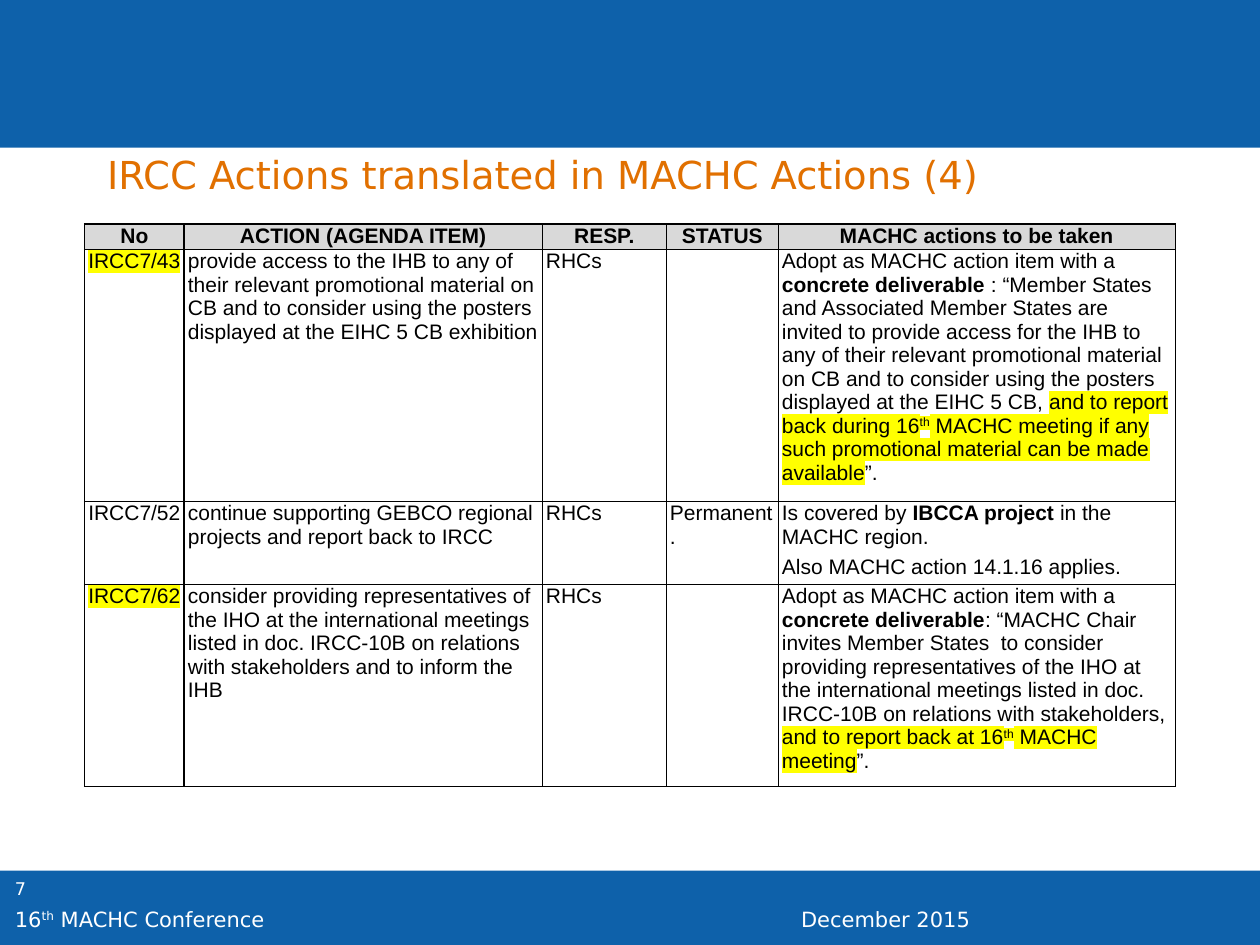
from dataclasses import dataclass

from lxml import etree
from pptx import Presentation
from pptx.dml.color import RGBColor
from pptx.enum.shapes import MSO_SHAPE
from pptx.enum.text import MSO_ANCHOR, MSO_AUTO_SIZE, PP_ALIGN
from pptx.oxml.ns import qn
from pptx.util import Pt

RECTANGLE = MSO_SHAPE.RECTANGLE
TOP, MIDDLE = MSO_ANCHOR.TOP, MSO_ANCHOR.MIDDLE
NO_AUTO_SIZE = MSO_AUTO_SIZE.NONE
LEFT, CENTER = PP_ALIGN.LEFT, PP_ALIGN.CENTER
TITLE_ONLY = 5


@dataclass(frozen=True)
class Theme:
    blue: str = "0E61AA"
    orange: str = "E17000"
    white: str = "FFFFFF"
    black: str = "000000"
    grey: str = "D9D9D9"
    yellow: str = "FFFF00"
    page_font: str = "DejaVu Sans"
    table_font: str = "Arial"
    title_size: float = 22
    text_size: float = 12
    number_size: float = 10


@dataclass(frozen=True)
class Span:
    text: str
    bold: bool = False
    marked: bool = False
    raised: bool = False


@dataclass(frozen=True)
class Style:
    font: str
    size: float
    color: str


@dataclass(frozen=True)
class Area:
    left: float
    top: float
    width: float
    height: float

    def lengths(self) -> tuple:
        return Pt(self.left), Pt(self.top), Pt(self.width), Pt(self.height)


@dataclass(frozen=True)
class Label:
    area: Area
    size: float
    spans: tuple


@dataclass(frozen=True)
class Action:
    number: Span
    task: str
    status: str
    outcome: tuple


THEME = Theme()
TITLE_STYLE = Style(THEME.page_font, THEME.title_size, THEME.orange)
TABLE_STYLE = Style(THEME.table_font, THEME.text_size, THEME.black)

BANDS = (Area(0, 497.5, 720, 42.5), Area(0, 0, 720, 84.4))
LABELS = (
    Label(Area(1.4, 498.2, 56.2, 28.8), THEME.number_size, (Span("7"),)),
    Label(Area(450.7, 514.3, 269.3, 17.3), THEME.text_size, (Span("December 2015"),)),
    Label(Area(1.4, 514.3, 315.4, 17.3), THEME.text_size,
          (Span("16"), Span("th", raised=True), Span(" MACHC Conference"))),
)
TITLE_AREA = Area(54, 82.8, 511.9, 33.8)
TABLE_AREA = Area(48.3, 128.1, 623.4, 321.2)
COLUMN_WIDTHS = (57, 204.6, 70.9, 64, 226.9)
ROW_HEIGHTS = (14.5, 143.9, 47.4, 115.4)
HEADERS = ("No", "ACTION (AGENDA ITEM)", "RESP.", "STATUS", "MACHC actions to be taken")
ADOPT = Span("Adopt as MACHC action item with a ")

ACTIONS = (
    Action(
        Span("IRCC7/43", marked=True),
        "provide access to the IHB to any of their relevant promotional material on CB "
        "and to consider using the posters displayed at the EIHC 5 CB exhibition",
        "",
        ((ADOPT,
          Span("concrete deliverable ", bold=True),
          Span(": “Member States and Associated Member States are invited to provide "
               "access for the IHB to any of their relevant promotional material on CB and "
               "to consider using the posters displayed at the EIHC 5 CB, "),
          Span("and to report back during 16", marked=True),
          Span("th", marked=True, raised=True),
          Span(" MACHC meeting if any such promotional material can be made available",
               marked=True),
          Span("”.")),),
    ),
    Action(
        Span("IRCC7/52"),
        "continue supporting GEBCO regional projects and report back to IRCC",
        "Permanent.",
        ((Span("Is covered by "), Span("IBCCA project ", bold=True),
          Span("in the MACHC region.")),
         (Span("Also MACHC action 14.1.16 applies."),)),
    ),
    Action(
        Span("IRCC7/62", marked=True),
        "consider providing representatives of the IHO at the international meetings "
        "listed in doc. IRCC-10B on relations with stakeholders and to inform the IHB",
        "",
        ((ADOPT,
          Span("concrete deliverable", bold=True),
          Span(": “MACHC Chair invites Member States  to consider providing "
               "representatives of the IHO at the international meetings listed in doc. "
               "IRCC-10B on relations with stakeholders, "),
          Span("and to report back at 16", marked=True),
          Span("th", marked=True, raised=True),
          Span(" MACHC meeting", marked=True),
          Span("”.")),),
    ),
)


def add_spans(para, spans: tuple, style: Style) -> None:
    for span in spans:
        run = para.add_run()
        run.text = span.text
        run.font.size = Pt(style.size)
        run.font.bold = span.bold
        run.font.color.rgb = RGBColor.from_string(style.color)
        properties = run.font._element
        if span.marked:
            highlight = etree.SubElement(properties, qn("a:highlight"))
            etree.SubElement(highlight, qn("a:srgbClr"), val=THEME.yellow)
        if span.raised:
            properties.set("baseline", "30000")
        run.font.name = style.font


def add_band(page, area: Area) -> None:
    band = page.shapes.add_shape(RECTANGLE, *area.lengths())
    band.shadow.inherit = False
    band.fill.solid()
    band.fill.fore_color.rgb = RGBColor.from_string(THEME.blue)
    band.line.fill.background()


def add_label(page, label: Label) -> None:
    frame = page.shapes.add_textbox(*label.area.lengths()).text_frame
    frame.word_wrap = True
    frame.vertical_anchor = TOP
    add_spans(frame.paragraphs[0], label.spans,
              Style(THEME.page_font, label.size, THEME.white))


def set_title(page, text: str) -> None:
    title = page.shapes.title
    title.left, title.top, title.width, title.height = TITLE_AREA.lengths()
    frame = title.text_frame
    frame.word_wrap = True
    frame.margin_right = Pt(0)
    frame.auto_size = NO_AUTO_SIZE
    frame.vertical_anchor = MIDDLE
    para = frame.paragraphs[0]
    para.alignment = LEFT
    add_spans(para, (Span(text),), TITLE_STYLE)


def set_borders(cell) -> None:
    properties = cell._tc.get_or_add_tcPr()
    for position, side in enumerate(("lnL", "lnR", "lnT", "lnB")):
        line = etree.Element(qn(f"a:{side}"), w=str(Pt(1)))
        fill = etree.SubElement(line, qn("a:solidFill"))
        etree.SubElement(fill, qn("a:srgbClr"), val=THEME.black)
        properties.insert(position, line)


def fill_cell(cell, paragraphs: tuple, centred: bool, header: bool) -> None:
    cell.margin_left = cell.margin_right = Pt(2.1)
    cell.margin_top = cell.margin_bottom = Pt(0)
    if header:
        cell.fill.solid()
        cell.fill.fore_color.rgb = RGBColor.from_string(THEME.grey)
    else:
        cell.fill.background()
    set_borders(cell)
    frame = cell.text_frame
    for index, spans in enumerate(paragraphs):
        para = frame.add_paragraph() if index else frame.paragraphs[0]
        para.alignment = CENTER if centred else LEFT
        para.space_before = Pt(2 if index else 0)
        para.space_after = Pt(2)
        add_spans(para, spans, TABLE_STYLE)


def action_cells(action: Action) -> tuple:
    status = ((Span(action.status),),) if action.status else ()
    return (((action.number,),), ((Span(action.task),),), ((Span("RHCs"),),),
            status, action.outcome)


def add_action_table(page) -> None:
    table = page.shapes.add_table(len(ROW_HEIGHTS), len(COLUMN_WIDTHS),
                                  *TABLE_AREA.lengths()).table
    table.first_row = table.horz_banding = False
    for column, width in zip(table.columns, COLUMN_WIDTHS):
        column.width = Pt(width)
    headings = tuple(((Span(text, bold=True),),) for text in HEADERS)
    contents = (headings, *map(action_cells, ACTIONS))
    for row_index, (row, height, cells) in enumerate(zip(table.rows, ROW_HEIGHTS, contents)):
        row.height = Pt(height)
        header = row_index == 0
        for column_index, (cell, paragraphs) in enumerate(zip(row.cells, cells)):
            fill_cell(cell, paragraphs, header or column_index == 0, header)


def main() -> None:
    deck = Presentation()
    deck.slide_width, deck.slide_height = Pt(720), Pt(540)
    page = deck.slides.add_slide(deck.slide_layouts[TITLE_ONLY])
    for area in BANDS:
        add_band(page, area)
    for label in LABELS:
        add_label(page, label)
    set_title(page, "IRCC Actions translated in MACHC Actions (4)")
    add_action_table(page)
    deck.save("out.pptx")


if __name__ == "__main__":
    main()
